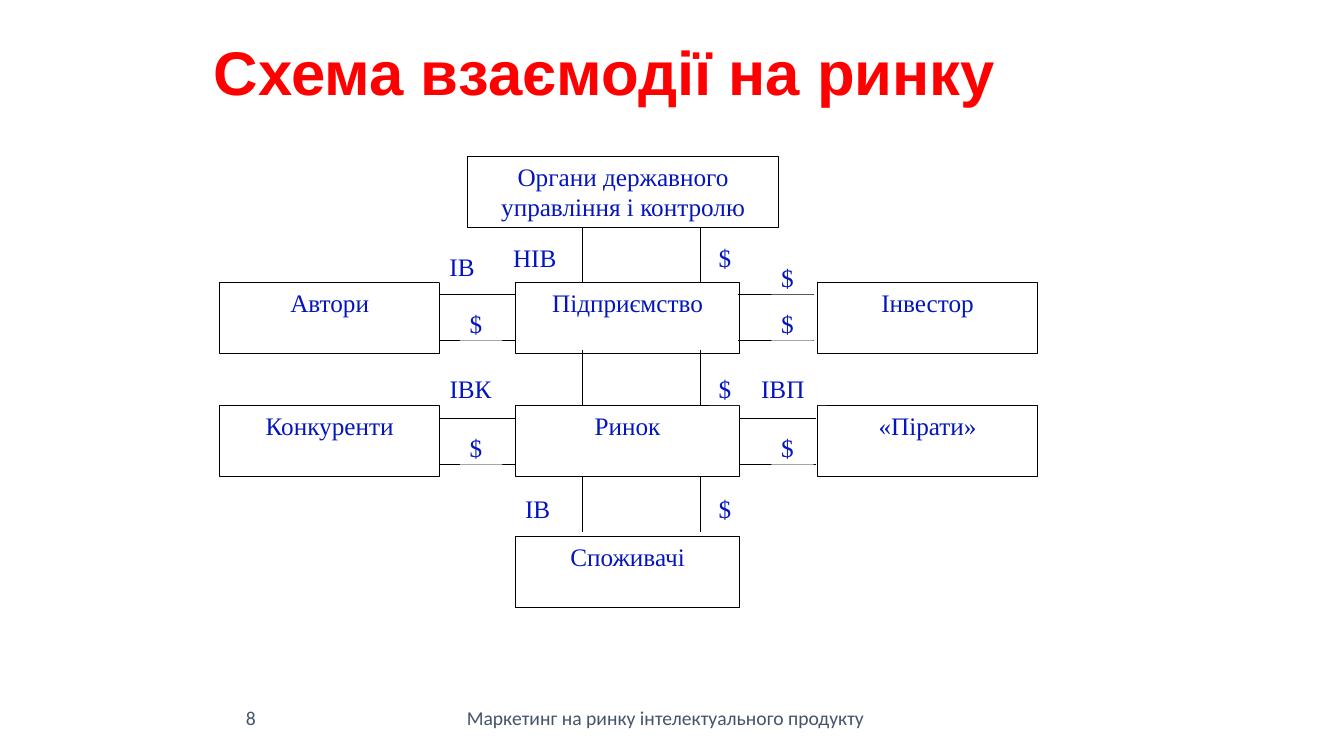
from lxml.etree import SubElement
from pptx import Presentation
from pptx.dml.color import RGBColor
from pptx.enum.shapes import MSO_CONNECTOR, MSO_SHAPE
from pptx.enum.text import MSO_ANCHOR, PP_ALIGN
from pptx.oxml.ns import qn
from pptx.util import Inches, Pt

RED = RGBColor(0xFF, 0x00, 0x00)
BLUE = RGBColor(0x03, 0x15, 0xBD)
SLATE = RGBColor(0x44, 0x54, 0x6A)
BLACK = RGBColor(0x00, 0x00, 0x00)
WHITE = RGBColor(0xFF, 0xFF, 0xFF)

TITLE = "Схема взаємодії на ринку"
FOOTERS = [  # text, left, width, alignment
    ("Маркетинг на ринку інтелектуального продукту", 3.99, 4.68, PP_ALIGN.RIGHT),
    ("8", 2.34, 2.17, PP_ALIGN.LEFT),
]

SIDE_W, MID_W, BOX_H = 2.18, 2.23, 0.71
LEFT_X, MID_X, RIGHT_X = 2.18, 5.11, 8.11
STATE_Y, FIRM_Y, MARKET_Y, BUYER_Y = 1.55, 2.8, 4.02, 5.32
BOXES = [  # text, left, top, width
    ("Органи державного управління і контролю", 4.64, STATE_Y, 3.08),
    ("Автори", LEFT_X, FIRM_Y, SIDE_W),
    ("Підприємство", MID_X, FIRM_Y, MID_W),
    ("Інвестор", RIGHT_X, FIRM_Y, SIDE_W),
    ("Конкуренти", LEFT_X, MARKET_Y, SIDE_W),
    ("Ринок", MID_X, MARKET_Y, MID_W),
    ("«Пірати»", RIGHT_X, MARKET_Y, SIDE_W),
    ("Споживачі", MID_X, BUYER_Y, MID_W),
]

LINK_W, LINK_H, LINK_GAP = 0.75, 0.55, 0.46
LINK_XS = (5.78, 6.95)
SIDE_LINKS = [(4.36, 2.92), (7.32, 2.92), (4.36, 4.15), (7.34, 4.15)]  # left, upper line
DOWN_LINKS = [2.26, 3.47, 4.73]  # top of each pair

LABEL_H = 0.37
LABELS = [  # text, width, places (left, top)
    ("$", 0.42, [(7.03, 2.35), (7.03, 3.65), (7.03, 4.84), (7.65, 2.55),
                 (7.65, 3.01), (7.65, 4.24), (4.56, 3.01), (4.56, 4.24)]),
    ("ІВ", 0.64, [(4.36, 2.44), (5.11, 4.84)]),
    ("ІВК", 0.75, [(4.36, 3.65)]),
    ("ІВП", 0.75, [(7.45, 3.65)]),
    ("НІВ", 0.75, [(4.99, 2.35)]),
]


def write(tf, text, font, size, color, align, bold=False):
    tf.word_wrap = True
    p = tf.paragraphs[0]
    p.alignment = align
    r = p.add_run()
    r.text = text
    r.font.name, r.font.size, r.font.bold = font, Pt(size), bold
    r.font.color.rgb = color
    return p


def add_block(s, text, x, y, w, h, align, outlined):
    sp = s.shapes.add_shape(MSO_SHAPE.RECTANGLE, Inches(x), Inches(y), Inches(w), Inches(h))
    sp.shadow.inherit = False
    sp.fill.solid()
    sp.fill.fore_color.rgb = WHITE
    if outlined:
        sp.line.color.rgb = BLACK
        sp.line.width = Pt(0.75)
    else:
        sp.line.fill.background()
    sp.text_frame.vertical_anchor = MSO_ANCHOR.TOP
    p = write(sp.text_frame, text, "Times New Roman", 18, BLUE, align)
    p.space_after = Pt(10)


def add_line(s, x1, y1, x2, y2):
    line = s.shapes.add_connector(MSO_CONNECTOR.STRAIGHT, Inches(x1), Inches(y1),
                                  Inches(x2), Inches(y2))
    line.line.color.rgb = BLACK
    line.line.width = Pt(0.75)
    SubElement(line._element.spPr, qn("a:effectLst"))


prs = Presentation()
prs.slide_width, prs.slide_height = Inches(13.33), Inches(7.5)
s = prs.slides.add_slide(prs.slide_layouts[5])

title = s.shapes.title
title.left, title.top = Inches(2.02), Inches(0.21)
title.width, title.height = Inches(9), Inches(1.08)
title.text_frame.vertical_anchor = MSO_ANCHOR.MIDDLE
p = write(title.text_frame, TITLE, "Arial", 44, RED, PP_ALIGN.LEFT, bold=True)
p.line_spacing = 0.9

for text, x, w, align in FOOTERS:
    tb = s.shapes.add_textbox(Inches(x), Inches(6.95), Inches(w), Inches(0.4))
    write(tb.text_frame, text, "Calibri", 14, SLATE, align)

for text, x, y, w in BOXES:
    add_block(s, text, x, y, w, BOX_H, PP_ALIGN.CENTER, outlined=True)

for x, top in SIDE_LINKS:
    for y in (top, top + LINK_GAP):
        add_line(s, x, y, x + LINK_W, y)
for y in DOWN_LINKS:
    for x in LINK_XS:
        add_line(s, x, y, x, y + LINK_H)

for text, w, places in LABELS:
    for x, y in places:
        add_block(s, text, x, y, w, LABEL_H, PP_ALIGN.LEFT, outlined=False)

prs.save("out.pptx")
